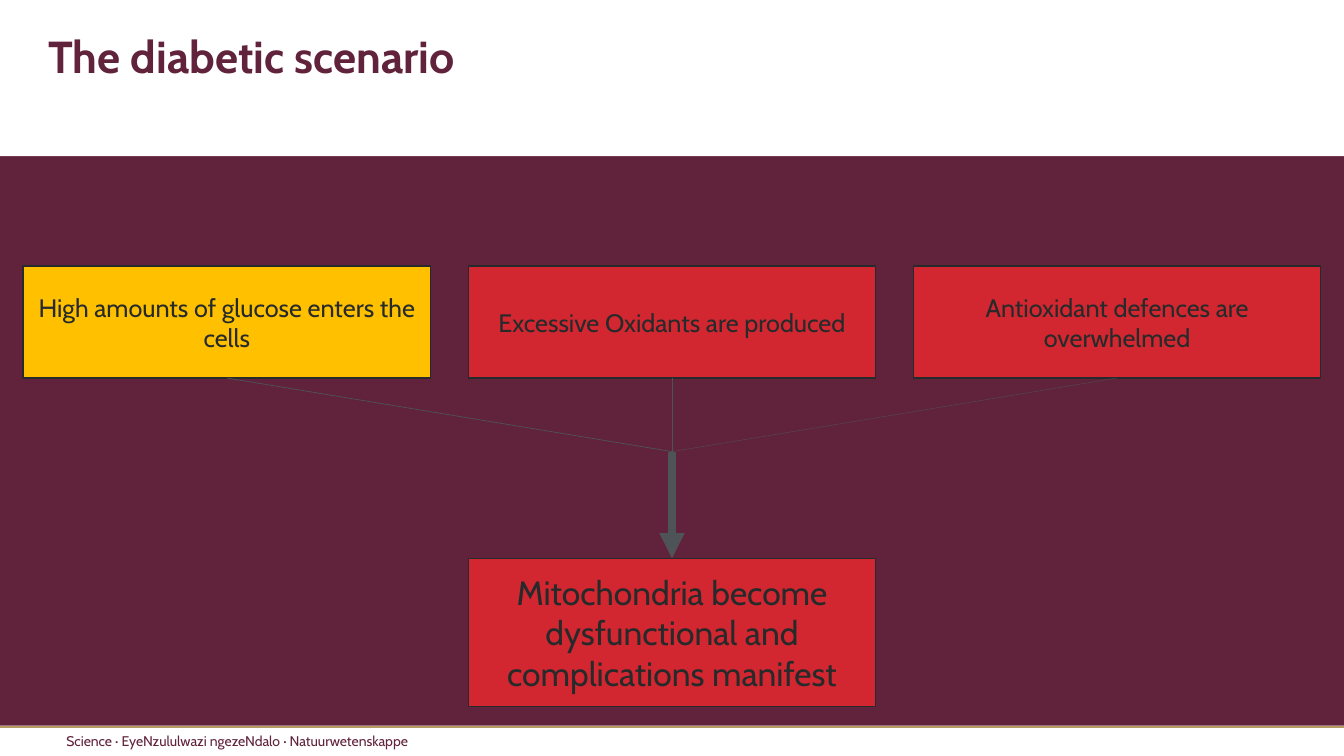
from dataclasses import dataclass

from lxml import etree
from pptx import Presentation
from pptx import util as u
from pptx.dml.color import RGBColor
from pptx.enum import shapes, text
from pptx.oxml import ns
from pptx.shapes.autoshape import Shape
from pptx.shapes.connector import Connector
from pptx.slide import Slide
from pptx.text.text import _Paragraph as Paragraph

COLORS = {
    "maroon": "61223B",
    "white": "FFFFFF",
    "gold": "B79962",
    "yellow": "FFC000",
    "red": "D22730",
    "ink": "262A2B",
    "grey": "4D5356",
}
FONT = "Cabin"
SLIDE_WIDTH, SLIDE_HEIGHT = 13.33, 7.5
BOX_WIDTH, BOX_LEFT, BOX_PITCH = 4.04, 0.23, 4.415
CAUSE_TOP, CAUSE_HEIGHT = 2.64, 1.11
EFFECT_TOP, EFFECT_HEIGHT = 5.54, 1.47
HUB_Y = 4.48
FOOTER_TOP = 7.2
TOP_SIDE, BOTTOM_SIDE = 0, 2


@dataclass
class Box:
    wording: str
    fill: str
    column: int
    top: float = CAUSE_TOP
    height: float = CAUSE_HEIGHT
    size: int = 18
    link_width: float = 0.5

    @property
    def left(self) -> float:
        return BOX_LEFT + self.column * BOX_PITCH

    @property
    def center(self) -> float:
        return self.left + BOX_WIDTH / 2


CAUSES = [
    Box("High amounts of glucose enters the cells", "yellow", 0),
    Box("Excessive Oxidants are produced", "red", 1),
    Box("Antioxidant defences are overwhelmed", "red", 2, link_width=0.25),
]
EFFECT = Box("Mitochondria become dysfunctional and complications manifest",
             "red", 1, EFFECT_TOP, EFFECT_HEIGHT, 24)


def color(name: str) -> RGBColor:
    return RGBColor.from_string(COLORS[name])


def style_text(paragraph: Paragraph, size: int, color_name: str, bold: bool = False) -> None:
    font = paragraph.font
    font.name, font.size, font.bold = FONT, u.Pt(size), bold
    font.color.rgb = color(color_name)


def add_rectangle(slide: Slide, left: float, top: float, width: float, height: float,
                  fill: str) -> Shape:
    shape = slide.shapes.add_shape(shapes.MSO_SHAPE.RECTANGLE, u.Inches(left), u.Inches(top),
                                   u.Inches(width), u.Inches(height))
    shape.shadow.inherit = False
    shape.fill.solid()
    shape.fill.fore_color.rgb = color(fill)
    shape.line.fill.background()
    return shape


def add_box(slide: Slide, box: Box) -> Shape:
    shape = add_rectangle(slide, box.left, box.top, BOX_WIDTH, box.height, box.fill)
    shape.line.color.rgb = color("ink")
    shape.line.width = u.Pt(1)
    frame = shape.text_frame
    frame.word_wrap = True
    frame.vertical_anchor = text.MSO_ANCHOR.MIDDLE
    paragraph = frame.paragraphs[0]
    paragraph.text = box.wording
    paragraph.alignment = text.PP_ALIGN.CENTER
    style_text(paragraph, box.size, "ink")
    return shape


def add_line(slide: Slide, start: tuple[float, float], end: tuple[float, float],
             color_name: str, width: float) -> Connector:
    line = slide.shapes.add_connector(shapes.MSO_CONNECTOR.STRAIGHT,
                                      *map(u.Inches, start + end))
    line.line.color.rgb = color(color_name)
    line.line.width = u.Pt(width)
    etree.SubElement(line.element.spPr, ns.qn("a:effectLst"))
    return line


def add_arrowhead(line: Connector) -> None:
    outline = line.element.spPr.find(ns.qn("a:ln"))
    etree.SubElement(outline, ns.qn("a:tailEnd"), type="triangle")


def add_footer(slide: Slide) -> None:
    add_rectangle(slide, 0, FOOTER_TOP, SLIDE_WIDTH, SLIDE_HEIGHT - FOOTER_TOP, "white")
    footer = slide.shapes.add_textbox(u.Inches(0.56), u.Inches(7.22),
                                      u.Inches(12.17), u.Inches(0.29))
    footer.text_frame.word_wrap = True
    paragraph = footer.text_frame.paragraphs[0]
    paragraph.text = "Science · EyeNzululwazi ngezeNdalo · Natuurwetenskappe"
    style_text(paragraph, 10, "maroon")
    add_line(slide, (0, 7.21), (SLIDE_WIDTH, 7.21), "gold", 1.5)


def add_header(slide: Slide) -> None:
    """Add the white band and bring the title placeholder in front of it."""
    band = add_rectangle(slide, 0, 0, SLIDE_WIDTH, 1.55, "white")
    title = slide.shapes.title
    band.element.addnext(title.element)
    title.left, title.top = u.Inches(0.38), u.Inches(0.29)
    title.width, title.height = u.Inches(9.74), u.Inches(1.11)
    frame = title.text_frame
    frame.vertical_anchor = text.MSO_ANCHOR.TOP
    paragraph = frame.paragraphs[0]
    paragraph.text = "The diabetic scenario"
    paragraph.alignment = text.PP_ALIGN.LEFT
    paragraph.line_spacing = 0.9
    style_text(paragraph, 32, "maroon", bold=True)


def add_diagram(slide: Slide) -> None:
    cause_shapes = [add_box(slide, cause) for cause in CAUSES]
    effect_shape = add_box(slide, EFFECT)
    hub = (EFFECT.center, HUB_Y)
    for cause, shape in zip(CAUSES, cause_shapes):
        start = (cause.center, cause.top + cause.height)
        link = add_line(slide, start, hub, "grey", cause.link_width)
        link.begin_connect(shape, BOTTOM_SIDE)
    arrow = add_line(slide, hub, (EFFECT.center, EFFECT.top), "grey", 6)
    arrow.end_connect(effect_shape, TOP_SIDE)
    add_arrowhead(arrow)


def main() -> None:
    presentation = Presentation()
    presentation.slide_width = u.Inches(SLIDE_WIDTH)
    presentation.slide_height = u.Inches(SLIDE_HEIGHT)
    slide = presentation.slides.add_slide(presentation.slide_layouts.get_by_name("Title Only"))
    slide.background.fill.solid()
    slide.background.fill.fore_color.rgb = color("maroon")
    add_footer(slide)
    add_header(slide)
    add_diagram(slide)
    presentation.save("out.pptx")


if __name__ == "__main__":
    main()
